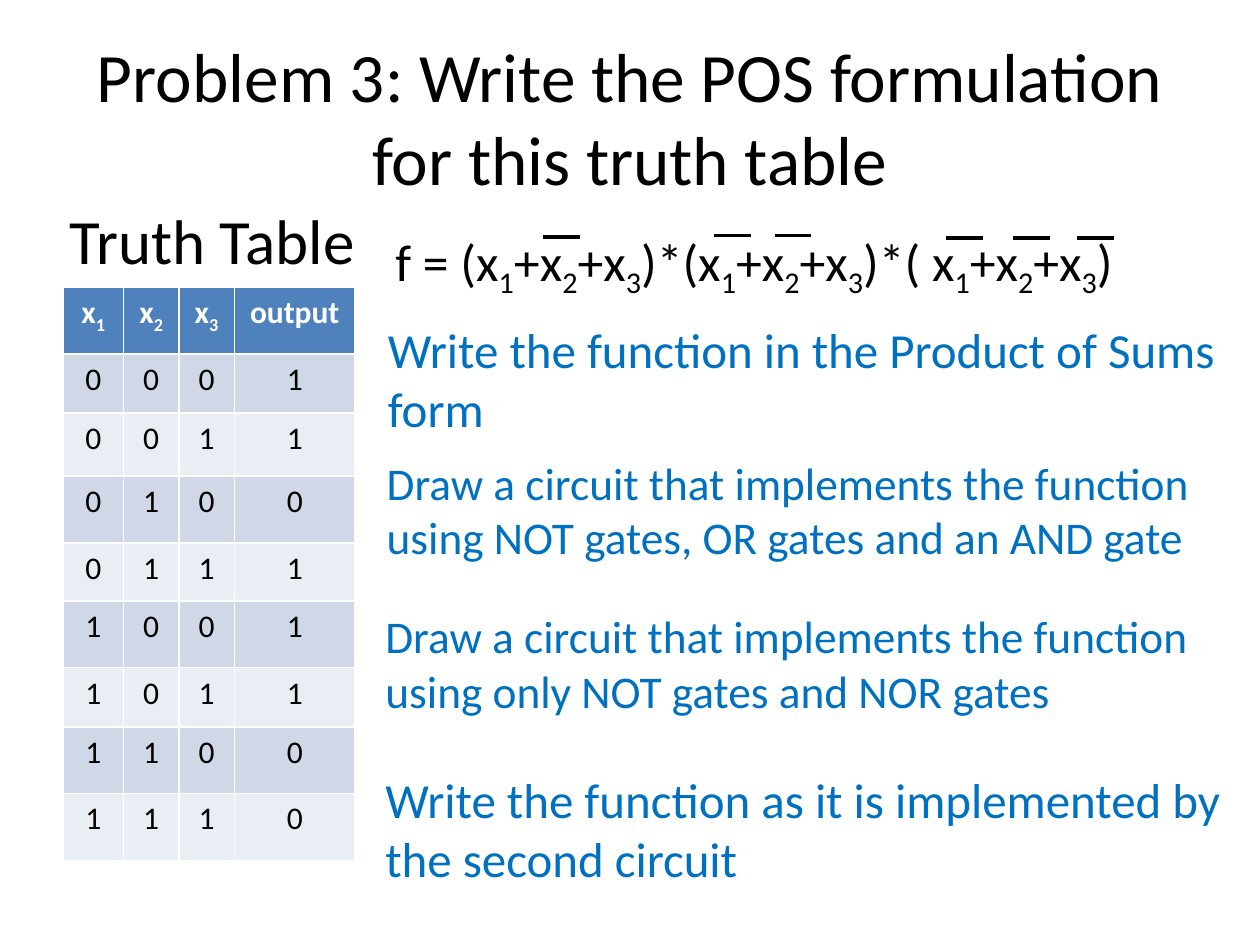
import itertools
import pptx
import pptx.util
import pptx.dml.color
import pptx.enum.shapes
import pptx.enum.text
from lxml import etree

Inches = pptx.util.Inches
ALIGN = pptx.enum.text.PP_ALIGN
ANCHOR = pptx.enum.text.MSO_ANCHOR
COLORS = {
    "black": "000000", "white": "FFFFFF", "blue": "0070C0",
    "head": "4F81BD", "odd": "D0D8E8", "even": "E9EDF4",
}
OUTPUTS = (1, 1, 0, 1, 1, 1, 0, 0)
COLS = (0.48, 0.44, 0.44, 0.96)
ROWS = (0.53, 0.47, 0.5, 0.53, 0.46, 0.53, 0.47, 0.53, 0.53)
TASKS = (
    ("Write the function in the Product of Sums form", 2.98, 2.49, 28),
    ("Draw a circuit that implements the function using NOT gates, "
     "OR gates and an AND gate", 2.97, 3.56, 25.9),
    ("Draw a circuit that implements the function using only NOT gates "
     "and NOR gates", 2.96, 4.78, 25.9),
    ("Write the function as it is implemented by the second circuit",
     2.96, 6.06, 28),
)
FORMULA = "f = (x_1+x_2+x_3)*(x_1+x_2+x_3)*( x_1+x_2+x_3)"
BARS = ((4.31, 1.88), (5.67, 1.87), (6.15, 1.87),
        (7.51, 1.89), (8.04, 1.89), (8.55, 1.89))


def rgb(name):
    return pptx.dml.color.RGBColor.from_string(COLORS[name])


def write(frame, text, size=18, color="black", bold=False, align=ALIGN.LEFT):
    """Fill a text frame; the character after each underscore is a subscript."""
    frame.word_wrap = True
    para = frame.paragraphs[0]
    para.alignment = align
    first, *rest = text.split("_")
    parts = [(first, False)]
    for part in rest:
        parts += [(part[0], True), (part[1:], False)]
    for words, sub in parts:
        if not words:
            continue
        run = para.add_run()
        run.text = words
        font = run.font
        font.name, font.size, font.bold = "Calibri", pptx.util.Pt(size), bold
        font.color.rgb = rgb(color)
        if sub:
            run._r.get_or_add_rPr().set("baseline", "-25000")


def add_text(shapes, text, x, y, w, h, **form):
    box = shapes.add_textbox(Inches(x), Inches(y), Inches(w), Inches(h))
    write(box.text_frame, text, **form)


def add_bar(shapes, x, y, w=0.29):
    line = shapes.add_connector(
        pptx.enum.shapes.MSO_CONNECTOR.STRAIGHT,
        Inches(x), Inches(y), Inches(x + w), Inches(y))
    line.line.color.rgb = rgb("black")
    line.line.width = pptx.util.Pt(2)
    etree.SubElement(line._element.spPr, pptx.oxml.ns.qn("a:effectLst"))


def add_title(slide, text):
    title = slide.shapes.title
    title.left, title.top = Inches(0.5), Inches(0.3)
    title.width, title.height = Inches(9), Inches(1.25)
    frame = title.text_frame
    frame.auto_size = pptx.enum.text.MSO_AUTO_SIZE.NONE
    frame.vertical_anchor = ANCHOR.MIDDLE
    write(frame, text, size=39.6, align=ALIGN.CENTER)


def add_truth(shapes):
    bits = itertools.product((0, 1), repeat=3)
    data = [("x_1", "x_2", "x_3", "output")]
    data += [(*row, out) for row, out in zip(bits, OUTPUTS)]
    table = shapes.add_table(
        len(ROWS), len(COLS), Inches(0.5), Inches(2.28),
        Inches(sum(COLS)), Inches(sum(ROWS))).table
    for col, width in zip(table.columns, COLS):
        col.width = Inches(width)
    for i, (row, height) in enumerate(zip(table.rows, ROWS)):
        row.height = Inches(height)
        fill = "head" if i == 0 else "odd" if i % 2 else "even"
        for cell, value in zip(row.cells, data[i]):
            cell.fill.solid()
            cell.fill.fore_color.rgb = rgb(fill)
            write(cell.text_frame, str(value), bold=i == 0,
                  color="black" if i else "white", align=ALIGN.CENTER)


def main():
    deck = pptx.Presentation()
    deck.slide_width, deck.slide_height = Inches(10), Inches(7.5)
    slide = deck.slides.add_slide(deck.slide_layouts[5])
    shapes = slide.shapes

    # Title and truth table
    add_title(slide, "Problem 3: Write the POS formulation for this truth table")
    add_text(shapes, " Truth Table", 0.34, 1.55, 2.63, 0.71, size=36)
    add_truth(shapes)

    # Formula with negation bars
    group = shapes.add_group_shape().shapes
    add_text(group, FORMULA, 3.04, 1.77, 6.27, 0.59, size=29.6)
    for x, y in BARS:
        add_bar(group, x, y)

    # Tasks
    for text, x, y, size in TASKS:
        add_text(shapes, text, x, y, 6.85, 1.1, size=size, color="blue")

    deck.save("out.pptx")


if __name__ == "__main__":
    main()
